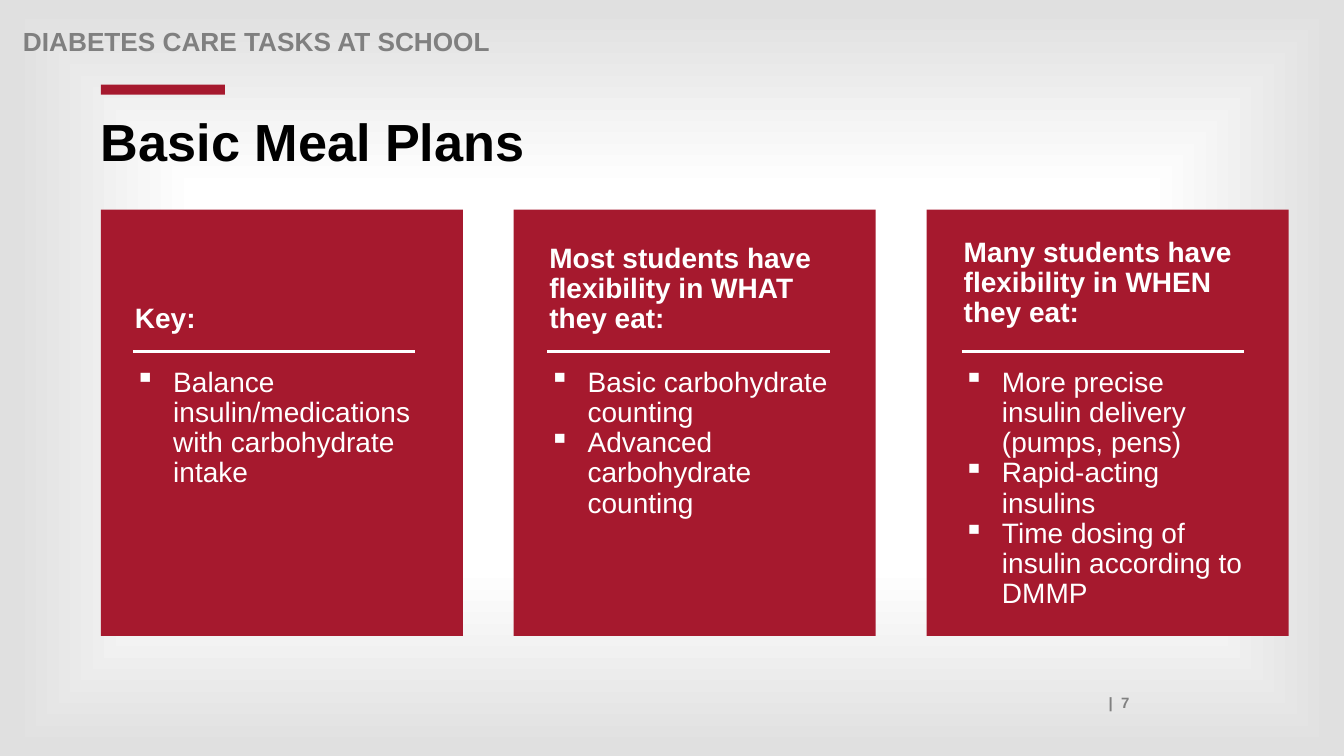
from lxml import etree
from pptx import Presentation
from pptx.dml.color import RGBColor
from pptx.enum.shapes import MSO_CONNECTOR as Connector, MSO_SHAPE as Shape
from pptx.enum.text import MSO_ANCHOR as Anchor, MSO_AUTO_SIZE as AutoSize, PP_ALIGN as Align
from pptx.oxml import parse_xml
from pptx.oxml.ns import nsdecls, qn
from pptx.util import Inches, Pt

COLORS = {"red": "A6192E", "white": "FFFFFF", "gray": "808080", "black": "000000", "edge": "E0E0E0"}
CARD_PITCH = 4.095
TEXT_PITCH = 4.11
CARDS = [
    ("Key:", 3.37, ["Balance insulin/medications with carbohydrate intake"]),
    ("Most students have flexibility in WHAT they eat:", 3.37,
     ["Basic carbohydrate counting", "Advanced carbohydrate counting"]),
    ("Many students have flexibility in WHEN they eat:", 3.31,
     ["More precise insulin delivery (pumps, pens)", "Rapid-acting insulins",
      "Time dosing of insulin according to DMMP"]),
]


def color(name):
    """Return the named palette colour."""
    return RGBColor.from_string(COLORS[name])


def set_background(page):
    """Fill the page with a white centre fading to gray edges."""
    stops = "".join(
        f'<a:gs pos="{place * 1000}"><a:srgbClr val="{COLORS[name]}"/></a:gs>'
        for place, name in [(12, "white"), (50, "white"), (98, "edge")])
    background = parse_xml(
        f'<p:bg {nsdecls("p", "a")}><p:bgPr><a:gradFill rotWithShape="1"><a:gsLst>{stops}</a:gsLst>'
        '<a:path path="shape"><a:fillToRect l="50000" t="50000" r="50000" b="50000"/></a:path>'
        '</a:gradFill><a:effectLst/></p:bgPr></p:bg>')
    page.element.cSld.insert(0, background)


def style_paragraph(para, size, tone, bold=False, spacing=0.9):
    """Set the line spacing of a paragraph and the font of its runs."""
    para.line_spacing = spacing
    para.space_before = Pt(0)
    for span in para.runs:
        span.font.name = "Arial"
        span.font.size = Pt(size)
        span.font.bold = bold
        span.font.color.rgb = color(tone)


def add_bullet(para):
    """Give a paragraph a hanging square bullet."""
    properties = para._p.get_or_add_pPr()
    properties.set("marL", str(Inches(0.38)))
    properties.set("indent", str(Inches(-0.38)))
    etree.SubElement(properties, qn("a:buChar")).set("char", "▪")


def add_text(page, left, top, width, height, lines, size, tone, bold=False, bullets=False,
             anchor=Anchor.TOP, align=Align.LEFT, spacing=0.9):
    """Add a wrapped text box with one paragraph per line."""
    box = page.shapes.add_textbox(Inches(left), Inches(top), Inches(width), Inches(height))
    frame = box.text_frame
    frame.word_wrap = True
    frame.vertical_anchor = anchor
    frame.text = "\n".join(lines)
    for para in frame.paragraphs:
        if bullets:
            add_bullet(para)
        para.alignment = align
        style_paragraph(para, size, tone, bold, spacing)


def add_block(page, left, top, width, height):
    """Add a plain red rectangle."""
    block = page.shapes.add_shape(
        Shape.RECTANGLE, Inches(left), Inches(top), Inches(width), Inches(height))
    block.shadow.inherit = False
    block.fill.solid()
    block.fill.fore_color.rgb = color("red")
    block.line.fill.background()


def add_rule(page, left, top, width):
    """Add a white horizontal line."""
    rule = page.shapes.add_connector(
        Connector.STRAIGHT, Inches(left), Inches(top), Inches(left + width), Inches(top))
    rule.line.color.rgb = color("white")
    rule.line.width = Pt(2)
    etree.SubElement(rule._element.spPr, qn("a:effectLst"))


def set_title(page, text):
    """Place and format the title placeholder."""
    title = page.shapes.title
    title.left, title.top = Inches(1), Inches(1.15)
    title.width, title.height = Inches(11.34), Inches(0.57)
    frame = title.text_frame
    frame.text = text
    frame.word_wrap = True
    frame.auto_size = AutoSize.NONE
    frame.vertical_anchor = Anchor.TOP
    frame.margin_left = frame.margin_right = frame.margin_top = frame.margin_bottom = 0
    frame.paragraphs[0].alignment = Align.LEFT
    style_paragraph(frame.paragraphs[0], 37.3, "black", bold=True)


def add_card(page, index, heading, heading_bottom, points):
    """Add a red card with heading, rule and bullet points."""
    text_left = 1.24 + TEXT_PITCH * index
    add_block(page, 1 + CARD_PITCH * index, 2.08, 3.59, 4.23)
    add_text(page, text_left, heading_bottom - 1.1, 2.96, 1.1, [heading], 20, "white",
             bold=True, anchor=Anchor.BOTTOM)
    add_rule(page, text_left + 0.08, 3.49, 2.8)
    add_text(page, text_left, 3.6, 3.03, 0.92, points, 20, "white", bullets=True)


def main():
    """Build the meal plan slide."""
    deck = Presentation()
    deck.slide_width, deck.slide_height = Inches(13.33), Inches(7.5)
    page = deck.slides.add_slide(deck.slide_layouts[5])
    set_background(page)
    add_text(page, 0.13, 0.24, 11, 0.28, ["DIABETES CARE TASKS AT SCHOOL"], 18.7, "gray", bold=True)
    add_block(page, 1, 0.84, 1.23, 0.1)
    set_title(page, "Basic Meal Plans")
    for index, card in enumerate(CARDS):
        add_card(page, index, *card)
    add_text(page, 1.21, 6.83, 10.09, 0.28, ["|  7"], 10.7, "gray", bold=True,
             align=Align.RIGHT, spacing=1.0)
    deck.save("out.pptx")


if __name__ == "__main__":
    main()
